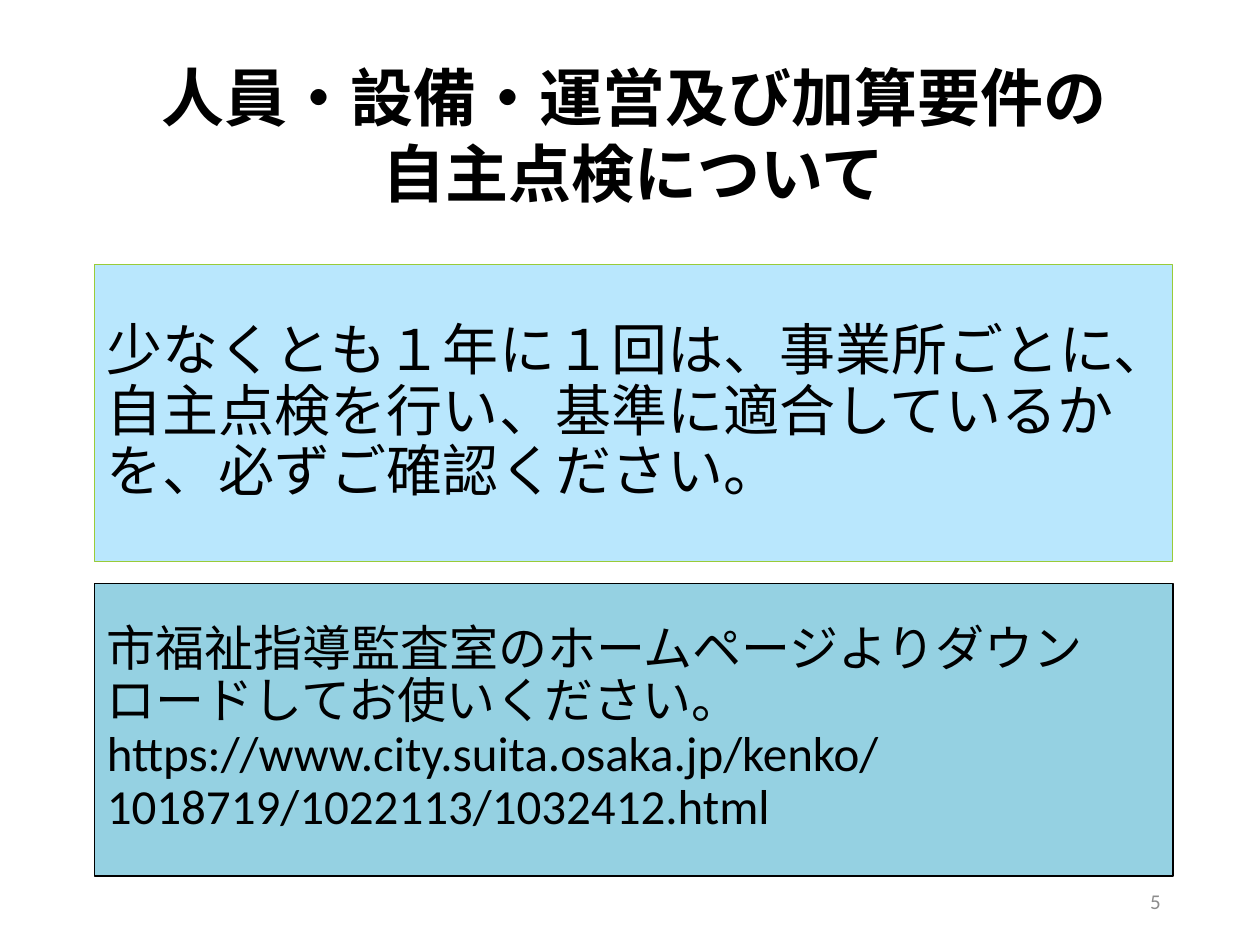
from pptx import Presentation
from pptx.dml.color import RGBColor
from pptx.enum import shapes, text
from pptx.util import Inches, Pt

FONT = "Calibri"
BOX_LEFT, BOX_WIDTH = 0.75, 8.56
RECT, PILL = shapes.MSO_SHAPE.RECTANGLE, shapes.MSO_SHAPE.ROUNDED_RECTANGLE
LEFT, CENTER, RIGHT = text.PP_ALIGN.LEFT, text.PP_ALIGN.CENTER, text.PP_ALIGN.RIGHT

panels = [
    dict(box=(BOX_LEFT, 2.1, BOX_WIDTH, 2.36), kind=RECT, fill="B9E7FD", line=("99CB38", 0.5),
         lines=["少なくとも１年に１回は、事業所ごとに、自主点検を行い、基準に適合しているかを、必ずご確認ください。"],
         style=dict(size=32, spacing=0.9, before=10)),
    dict(box=(0.48, 0.2, 9.1, 1.73), kind=PILL, fill="FFFFFF", line=None,
         lines=["人員・設備・運営及び加算要件の", "自主点検について"],
         style=dict(size=36, bold=True, align=CENTER)),
    dict(box=(BOX_LEFT, 4.63, BOX_WIDTH, 2.32), kind=RECT, fill="95D1E2", line=("000000", 1),
         lines=["市福祉指導監査室のホームページよりダウンロードしてお使いください。",
                "https://www.city.suita.osaka.jp/kenko/1018719/1022113/1032412.html"],
         style=dict(size=28, spacing=0.9)),
]
page_number = dict(box=(7.06, 6.95, 2.25, 0.4), lines=["5"],
                   style=dict(size=12, color="8C8C8C", align=RIGHT))


def rgb(value):
    return RGBColor.from_string(value)


def write(frame, lines, size, color="000000", bold=False, align=LEFT, spacing=1.0, before=0):
    frame.word_wrap = True
    frame.vertical_anchor = text.MSO_ANCHOR.MIDDLE
    for i, line in enumerate(lines):
        paragraph = frame.paragraphs[0] if i == 0 else frame.add_paragraph()
        paragraph.text = line
        paragraph.alignment = align
        paragraph.line_spacing = spacing
        paragraph.space_before = Pt(before)
        font = paragraph.font
        font.name, font.size, font.bold = FONT, Pt(size), bold
        font.color.rgb = rgb(color)


def add_panel(slide, box, kind, fill, line, lines, style):
    panel = slide.shapes.add_shape(kind, *map(Inches, box))
    panel.shadow.inherit = False
    if kind == PILL:
        panel.adjustments[0] = 0.5
    panel.fill.solid()
    panel.fill.fore_color.rgb = rgb(fill)
    if line:
        color, width = line
        panel.line.color.rgb = rgb(color)
        panel.line.width = Pt(width)
    else:
        panel.line.fill.background()
    write(panel.text_frame, lines, **style)


def main():
    deck = Presentation()
    deck.slide_width, deck.slide_height = Inches(10), Inches(7.5)
    slide = deck.slides.add_slide(deck.slide_layouts[6])
    for panel in panels:
        add_panel(slide, **panel)
    number = slide.shapes.add_textbox(*map(Inches, page_number["box"]))
    write(number.text_frame, page_number["lines"], **page_number["style"])
    deck.save("out.pptx")


if __name__ == "__main__":
    main()
